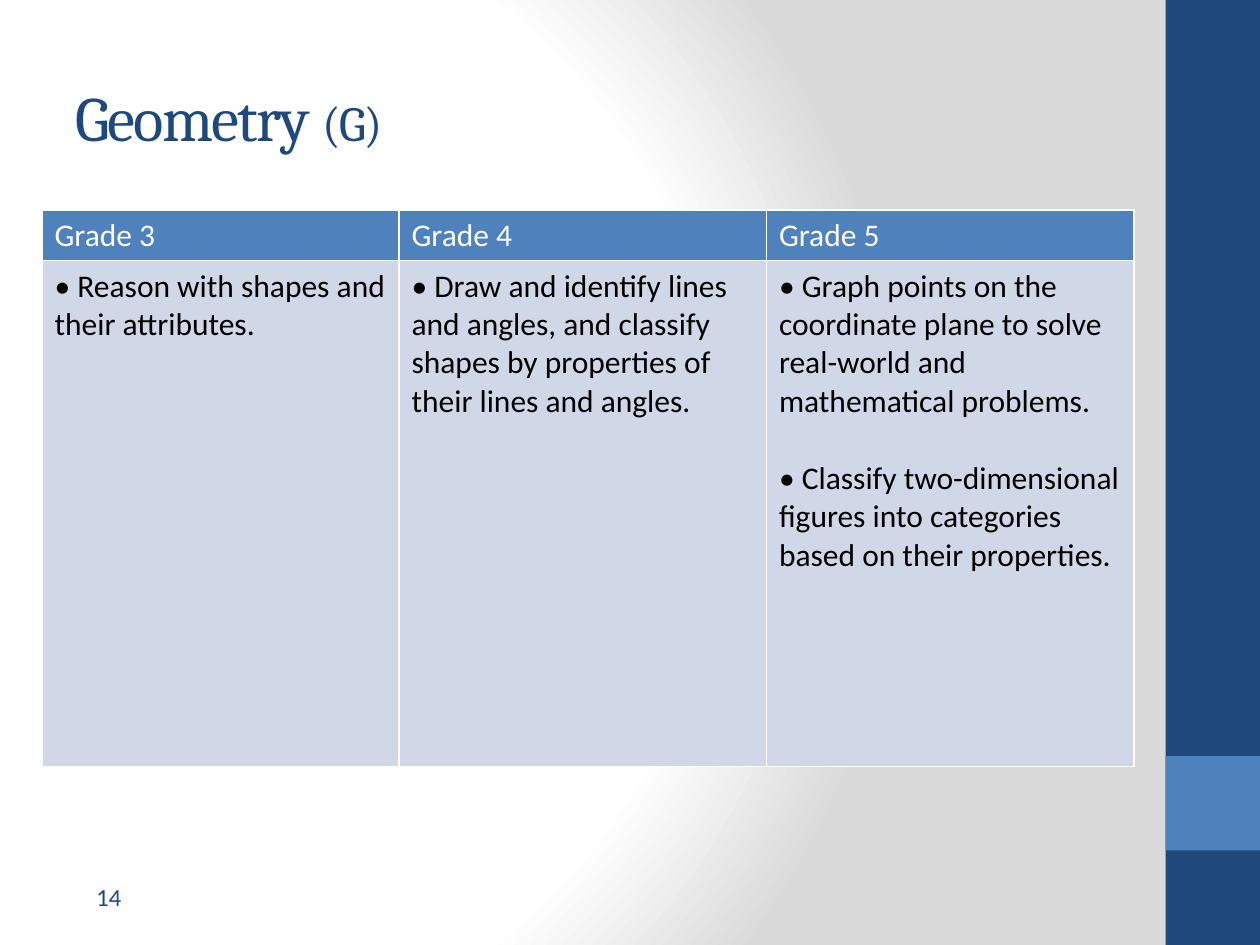
from pptx import Presentation
from pptx.dml.color import RGBColor
from pptx.enum.shapes import MSO_SHAPE as Shape
from pptx.enum.text import MSO_ANCHOR as Anchor
from pptx.oxml import parse_xml
from pptx.oxml.ns import nsdecls
from pptx.util import Pt

NAVY, BLUE, PALE, WHITE, BLACK = "1F497D", "4F81BD", "D0D8E8", "FFFFFF", "000000"
GRADES = {
    "Grade 3": ["• Reason with shapes and their attributes."],
    "Grade 4": ["• Draw and identify lines and angles, and classify shapes by "
                "properties of their lines and angles."],
    "Grade 5": ["• Graph points on the coordinate plane to solve real-world and "
                "mathematical problems.",
                "• Classify two-dimensional figures into categories based on "
                "their properties."],
}


def color(value):
    """Turn a hex string into a colour."""
    return RGBColor.from_string(value)


def style(font, name, size, value):
    """Set the face, size and colour of a font."""
    font.name, font.size = name, Pt(size)
    font.color.rgb = color(value)


def add_background(slide):
    """Fill the slide with a radial gradient from white to grey."""
    stops = "".join(
        f'<a:gs pos="{position * 1000}"><a:srgbClr val="{value}"/></a:gs>'
        for position, value in ((0, WHITE), (75, WHITE), (100, "DADADA")))
    slide.element.cSld.insert(0, parse_xml(
        f'<p:bg {nsdecls("p", "a")}><p:bgPr><a:gradFill rotWithShape="1">'
        f'<a:gsLst>{stops}</a:gsLst><a:path path="circle">'
        '<a:fillToRect l="20000" t="50000" r="100000" b="50000"/></a:path>'
        '</a:gradFill><a:effectLst/></p:bgPr></p:bg>'))


def add_side_band(slide, left, top, width, height):
    """Draw the navy band with a lighter square near its foot."""
    square_top = top + height - 2 * width
    for y, tall, value in ((top, height, NAVY), (square_top, width, BLUE)):
        shape = slide.shapes.add_shape(
            Shape.RECTANGLE, Pt(left), Pt(y), Pt(width), Pt(tall))
        shape.shadow.inherit = False
        shape.fill.solid()
        shape.fill.fore_color.rgb = color(value)
        shape.line.fill.background()


def add_text_box(slide, left, top, width, height):
    """Add a wrapping text box and return its text frame."""
    frame = slide.shapes.add_textbox(
        Pt(left), Pt(top), Pt(width), Pt(height)).text_frame
    frame.word_wrap = True
    return frame


def add_title(slide, left, top, width, height):
    """Write the title with its smaller abbreviation."""
    frame = add_text_box(slide, left, top, width, height)
    frame.vertical_anchor = Anchor.MIDDLE
    for text, size in (("Geometry ", 36), ("(G)", 28)):
        run = frame.paragraphs[0].add_run()
        run.text = text
        style(run.font, "Cambria", size, NAVY)
        run.font._element.set("spc", "-100")


def add_page_number(slide, left, top, width, height):
    """Write the page number."""
    paragraph = add_text_box(slide, left, top, width, height).paragraphs[0]
    paragraph.text = "14"
    style(paragraph.font, "Calibri", 14, NAVY)


def fill_cell(cell, texts, text_color, fill_color):
    """Write paragraphs into a cell with a fill and thin white borders."""
    properties = cell._tc.get_or_add_tcPr()
    for side in "LRTB":
        properties.append(parse_xml(
            f'<a:ln{side} {nsdecls("a")} w="12700"><a:solidFill>'
            f'<a:srgbClr val="{WHITE}"/></a:solidFill></a:ln{side}>'))
    cell.fill.solid()
    cell.fill.fore_color.rgb = color(fill_color)
    frame = cell.text_frame
    for index, text in enumerate(texts):
        paragraph = frame.add_paragraph() if index else frame.paragraphs[0]
        paragraph.text = text
        paragraph.space_before = Pt(22 if index else 0)
        style(paragraph.font, "Calibri", 18, text_color)


def add_grade_table(slide, left, top, width, height):
    """Build the table with one column for each grade."""
    header_height, first_width = 29, 204
    table = slide.shapes.add_table(
        2, len(GRADES), Pt(left), Pt(top), Pt(width), Pt(height)).table
    table.rows[0].height = Pt(header_height)
    table.rows[1].height = Pt(height - header_height)
    other_width = (width - first_width) / (len(GRADES) - 1)
    for index, (grade, points) in enumerate(GRADES.items()):
        table.columns[index].width = Pt(other_width if index else first_width)
        fill_cell(table.cell(0, index), [grade], WHITE, BLUE)
        fill_cell(table.cell(1, index), points, BLACK, PALE)


def main():
    """Build and save the slide."""
    presentation = Presentation()
    presentation.slide_width, presentation.slide_height = Pt(720), Pt(540)
    slide = presentation.slides.add_slide(presentation.slide_layouts[6])
    add_background(slide)
    add_side_band(slide, 666, 0, 54, 540)
    add_title(slide, 36, 21.6, 600, 90)
    add_grade_table(slide, 24, 120, 624, 318)
    add_page_number(slide, 48, 500.4, 156, 28.8)
    presentation.save("out.pptx")


if __name__ == "__main__":
    main()
